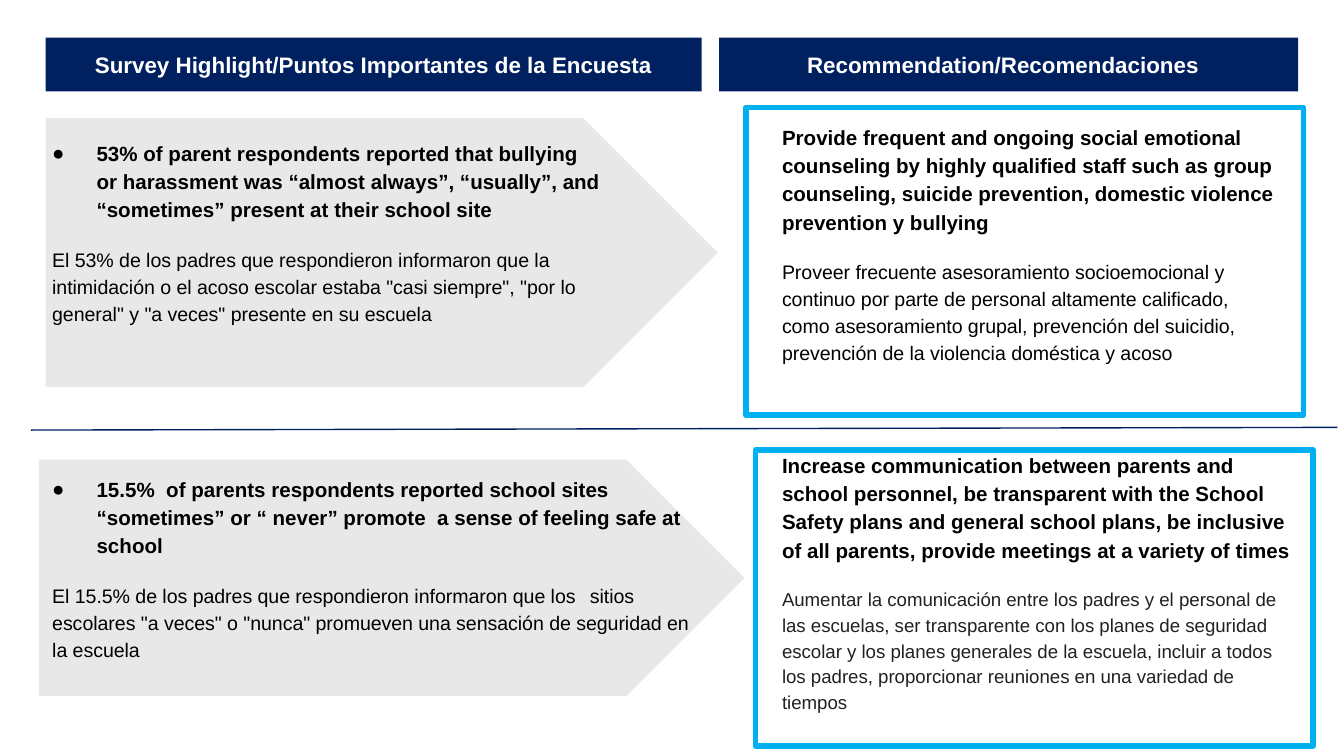
from typing import NamedTuple

from lxml.etree import SubElement
from pptx import Presentation
from pptx.dml.color import RGBColor
from pptx.enum.shapes import MSO_CONNECTOR, MSO_SHAPE
from pptx.enum.text import MSO_ANCHOR, PP_ALIGN
from pptx.oxml.ns import qn
from pptx.util import Inches, Pt

FONT = "Arial"
COLORS = {
    "navy": "002060",
    "cyan": "00B0F0",
    "grey": "E8E8E8",
    "white": "FFFFFF",
    "black": "000000",
    "charcoal": "212121",
}


class Box(NamedTuple):
    left: float
    top: float
    width: float
    height: float

    def emu(self) -> list:
        return [Inches(length) for length in self]


class Header(NamedTuple):
    box: Box
    label: str


class Message(NamedTuple):
    """An English statement with its Spanish translation below."""
    box: Box
    english: str
    spanish: str
    bulleted: bool = False
    spanish_size: float = 10.5
    spanish_color: str = "black"


ARROWS = [Box(0.29, 3.42, 5.25, 1.76), Box(0.34, 0.88, 5, 2)]
FRAMES = [Box(5.55, 0.8, 4.15, 2.29), Box(5.62, 3.35, 4.15, 2.2)]
HEADERS = [
    Header(Box(0.34, 0.28, 4.88, 0.4), "Survey Highlight/Puntos Importantes de la Encuesta"),
    Header(Box(5.35, 0.28, 4.31, 0.4), "Recommendation/Recomendaciones\t"),
]
MESSAGES = [
    Message(
        Box(0.12, 0.92, 4.46, 1.64),
        "53% of parent respondents reported that bullying or harassment was "
        "“almost always”, “usually”, and “sometimes” present at their school site",
        "El 53% de los padres que respondieron informaron que la intimidación o el acoso "
        'escolar estaba "casi siempre", "por lo general" y "a veces" presente en su escuela',
        bulleted=True,
    ),
    Message(
        Box(5.55, 0.8, 4.08, 2.11),
        "Provide frequent and ongoing social emotional counseling by highly qualified staff "
        "such as group counseling, suicide prevention, domestic violence prevention y bullying",
        "Proveer frecuente asesoramiento socioemocional y continuo por parte de personal "
        "altamente calificado, como asesoramiento grupal, prevención del suicidio, "
        "prevención de la violencia doméstica y acoso",
    ),
    Message(
        Box(0.12, 3.42, 5.22, 2),
        "15.5%  of parents respondents reported school sites “sometimes” or “ never” "
        "promote  a sense of feeling safe at school",
        "El 15.5% de los padres que respondieron informaron que los \tsitios escolares "
        '"a veces" o "nunca" promueven una sensación de seguridad en la escuela',
        bulleted=True,
    ),
    Message(
        Box(5.55, 3.24, 4.22, 2.42),
        "Increase communication between parents and school personnel, be transparent with "
        "the School Safety plans and general school plans, be inclusive of all parents, "
        "provide meetings at a variety of times",
        "Aumentar la comunicación entre los padres y el personal de las escuelas, ser "
        "transparente con los planes de seguridad escolar y los planes generales de la "
        "escuela, incluir a todos los padres, proporcionar reuniones en una variedad de tiempos",
        spanish_size=10,
        spanish_color="charcoal",
    ),
]


def rgb(color: str) -> RGBColor:
    return RGBColor.from_string(COLORS[color])


def add_panel(slide, kind: MSO_SHAPE, box: Box, fill: str = "", line: str = ""):
    """Add a preset shape; an empty colour means no fill or no outline."""
    panel = slide.shapes.add_shape(kind, *box.emu())
    panel.shadow.inherit = False
    if fill:
        panel.fill.solid()
        panel.fill.fore_color.rgb = rgb(fill)
    else:
        panel.fill.background()
    if line:
        panel.line.color.rgb = rgb(line)
        panel.line.width = Pt(3)
    else:
        panel.line.fill.background()
    return panel


def set_font(paragraph, size: float, color: str, bold: bool) -> None:
    font = paragraph.font
    font.name, font.size, font.bold = FONT, Pt(size), bold
    font.color.rgb = rgb(color)


def set_margins(frame) -> None:
    frame.word_wrap = True
    frame.margin_left = frame.margin_right = Inches(0.1)
    frame.margin_top = frame.margin_bottom = Inches(0.1)


def set_indent(paragraph, bulleted: bool) -> None:
    props = paragraph._p.get_or_add_pPr()
    props.set("marL", str(Inches(0.5 if bulleted else 0.17)))
    props.set("indent", str(Inches(-0.33 if bulleted else 0)))
    if bulleted:
        bullet_color = SubElement(props, qn("a:buClr"))
        SubElement(bullet_color, qn("a:srgbClr"), val=COLORS["black"])
        SubElement(props, qn("a:buFont"), typeface=FONT)
        SubElement(props, qn("a:buChar"), char="●")


def add_header(slide, header: Header) -> None:
    frame = add_panel(slide, MSO_SHAPE.RECTANGLE, header.box, fill="navy").text_frame
    set_margins(frame)
    frame.vertical_anchor = MSO_ANCHOR.MIDDLE
    heading = frame.paragraphs[0]
    heading.text = header.label
    heading.alignment = PP_ALIGN.CENTER
    set_font(heading, 12, "white", True)


def add_message(slide, message: Message) -> None:
    frame = slide.shapes.add_textbox(*message.box.emu()).text_frame
    set_margins(frame)
    english, spanish = frame.paragraphs[0], frame.add_paragraph()
    english.text, spanish.text = message.english, message.spanish
    for paragraph in (english, spanish):
        paragraph.line_spacing = 1.15
        paragraph.space_before = Pt(12)
    set_indent(english, message.bulleted)
    set_indent(spanish, False)
    set_font(english, 11, "black", True)
    set_font(spanish, message.spanish_size, message.spanish_color, False)


def add_divider(slide) -> None:
    ends = [Inches(length) for length in (0.23, 3.2, 9.95, 3.18)]
    divider = slide.shapes.add_connector(MSO_CONNECTOR.STRAIGHT, *ends)
    divider.line.color.rgb = rgb("navy")
    divider.line.width = Pt(0.75)
    SubElement(divider._element.spPr, qn("a:effectLst"))


def main() -> None:
    deck = Presentation()
    deck.slide_width = Inches(10)
    deck.slide_height = deck.slide_width * 9 // 16
    slide = deck.slides.add_slide(deck.slide_layouts[6])
    for arrow in ARROWS:
        add_panel(slide, MSO_SHAPE.PENTAGON, arrow, fill="grey")
    for message in MESSAGES:
        add_message(slide, message)
    for header in HEADERS:
        add_header(slide, header)
    add_divider(slide)
    for frame in FRAMES:
        add_panel(slide, MSO_SHAPE.RECTANGLE, frame, line="cyan")
    deck.save("out.pptx")


if __name__ == "__main__":
    main()
